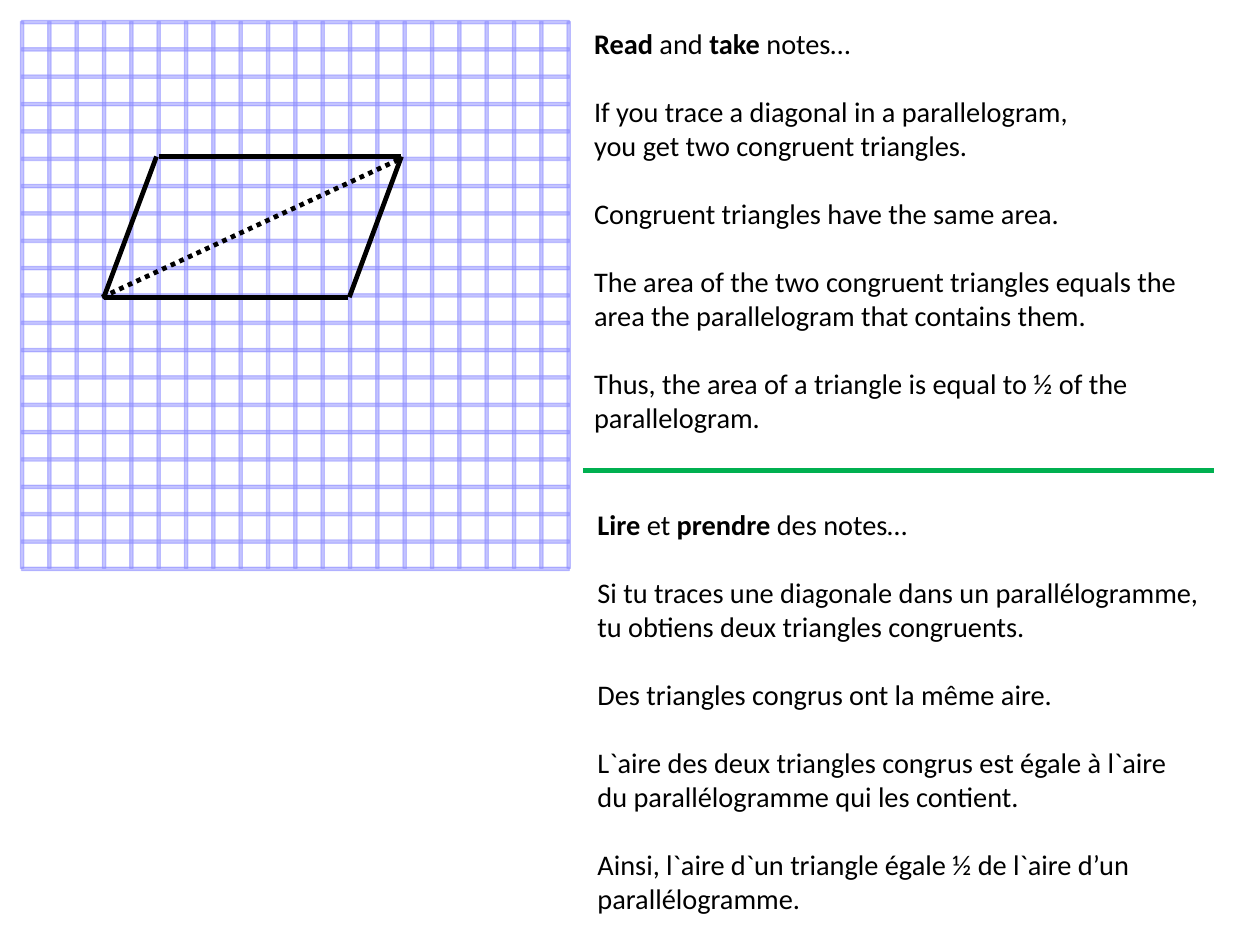
from lxml import etree
from pptx import Presentation
from pptx.dml.color import RGBColor
from pptx.enum.dml import MSO_LINE
from pptx.enum.shapes import MSO_CONNECTOR, MSO_SHAPE
from pptx.oxml.ns import qn
from pptx.util import Inches, Pt

RECTANGLE = MSO_SHAPE.RECTANGLE
STRAIGHT = MSO_CONNECTOR.STRAIGHT
DOT = MSO_LINE.ROUND_DOT

COLORS = {"grid": "8C8CFF", "ink": "000000", "divider": "00B050"}
CELLS = 20
PITCH = 4.82 / CELLS
BAR = 0.03

# Each block is a list of lines; each line is a list of (text, bold) runs
ENGLISH = [
    [[("Read", True), (" and ", False), ("take", True), (" notes…", False)]],
    [[("If you trace a diagonal in a parallelogram,", False)],
     [("you get two congruent triangles.", False)]],
    [[("Congruent triangles have the same area.", False)]],
    [[("The area of the two congruent triangles equals the area the "
       "parallelogram that contains them.", False)]],
    [[("Thus, the area of a triangle is equal to ½ of the", False)],
     [("parallelogram.", False)]],
]
FRENCH = [
    [[("Lire", True), (" et ", False), ("prendre", True), (" des notes…", False)]],
    [[("Si tu traces une diagonale dans un parallélogramme,", False)],
     [("tu obtiens deux triangles congruents.", False)]],
    [[("Des triangles congrus ont la même aire.", False)]],
    [[("L`aire des deux triangles congrus est égale à l`aire", False)],
     [("du parallélogramme qui les contient.", False)]],
    [[("Ainsi, l`aire d`un triangle égale ½ de l`aire d’un", False)],
     [("parallélogramme.", False)]],
]


class SlideBuilder:
    font = "Calibri"
    size = Pt(18)
    blank_line = Pt(21.6)
    line_width = Pt(3)

    def __init__(self, prs):
        self.slide = prs.slides.add_slide(prs.slide_layouts[6])

    def group(self):
        return self.slide.shapes.add_group_shape().shapes

    def color(self, name):
        return RGBColor.from_string(COLORS[name])

    def bar(self, shapes, x, y, w, h):
        s = shapes.add_shape(RECTANGLE, Inches(x), Inches(y), Inches(w), Inches(h))
        s.shadow.inherit = False
        s.fill.solid()
        s.fill.fore_color.rgb = self.color("grid")
        s.line.color.rgb = self.color("grid")
        s.line.width = 0
        for clr in s._element.spPr.iter(qn("a:srgbClr")):
            etree.SubElement(clr, qn("a:alpha")).set("val", "51000")

    def line(self, shapes, start, end, color="ink", dash=None):
        points = [Inches(v) for v in (*start, *end)]
        s = shapes.add_connector(STRAIGHT, *points)
        s.line.color.rgb = self.color(color)
        s.line.width = self.line_width
        if dash:
            s.line.dash_style = dash
        etree.SubElement(s._element.spPr, qn("a:effectLst"))

    def notes(self, x, y, blocks):
        s = self.slide.shapes.add_textbox(Inches(x), Inches(y), Inches(5.56), Inches(3.74))
        tf = s.text_frame
        tf.word_wrap = True
        for b, block in enumerate(blocks):
            for i, runs in enumerate(block):
                first = b == 0 and i == 0
                p = tf.paragraphs[0] if first else tf.add_paragraph()
                if b and i == 0:
                    p.space_before = self.blank_line
                for text, bold in runs:
                    r = p.add_run()
                    r.text = text
                    r.font.name = self.font
                    r.font.size = self.size
                    r.font.bold = bold
                    r.font.color.rgb = self.color("ink")


def main():
    prs = Presentation()
    prs.slide_width = Inches(11.11)
    prs.slide_height = Inches(8.33)
    sb = SlideBuilder(prs)

    # Squared paper
    grid = sb.group()
    for i in range(CELLS + 1):
        offset = 0.18 + i * PITCH
        sb.bar(grid, offset, 0.19, BAR, 4.82)
        sb.bar(grid, 0.19, offset, 4.83, BAR)

    # Parallelogram
    sides = sb.group()
    sb.line(sides, (1.4, 1.38), (3.54, 1.38))
    sb.line(sides, (3.07, 2.62), (0.92, 2.62))
    sb.line(sides, (1.38, 1.38), (0.92, 2.61))
    sb.line(sides, (3.54, 1.38), (3.08, 2.62))

    # English notes, diagonal, divider and French notes
    sb.notes(5.14, 0.18, ENGLISH)
    sb.line(sb.slide.shapes, (0.9, 2.62), (3.53, 1.4), dash=DOT)
    sb.line(sb.slide.shapes, (5.14, 4.15), (10.7, 4.15), "divider")
    sb.notes(5.17, 4.42, FRENCH)

    prs.save("out.pptx")


if __name__ == "__main__":
    main()
